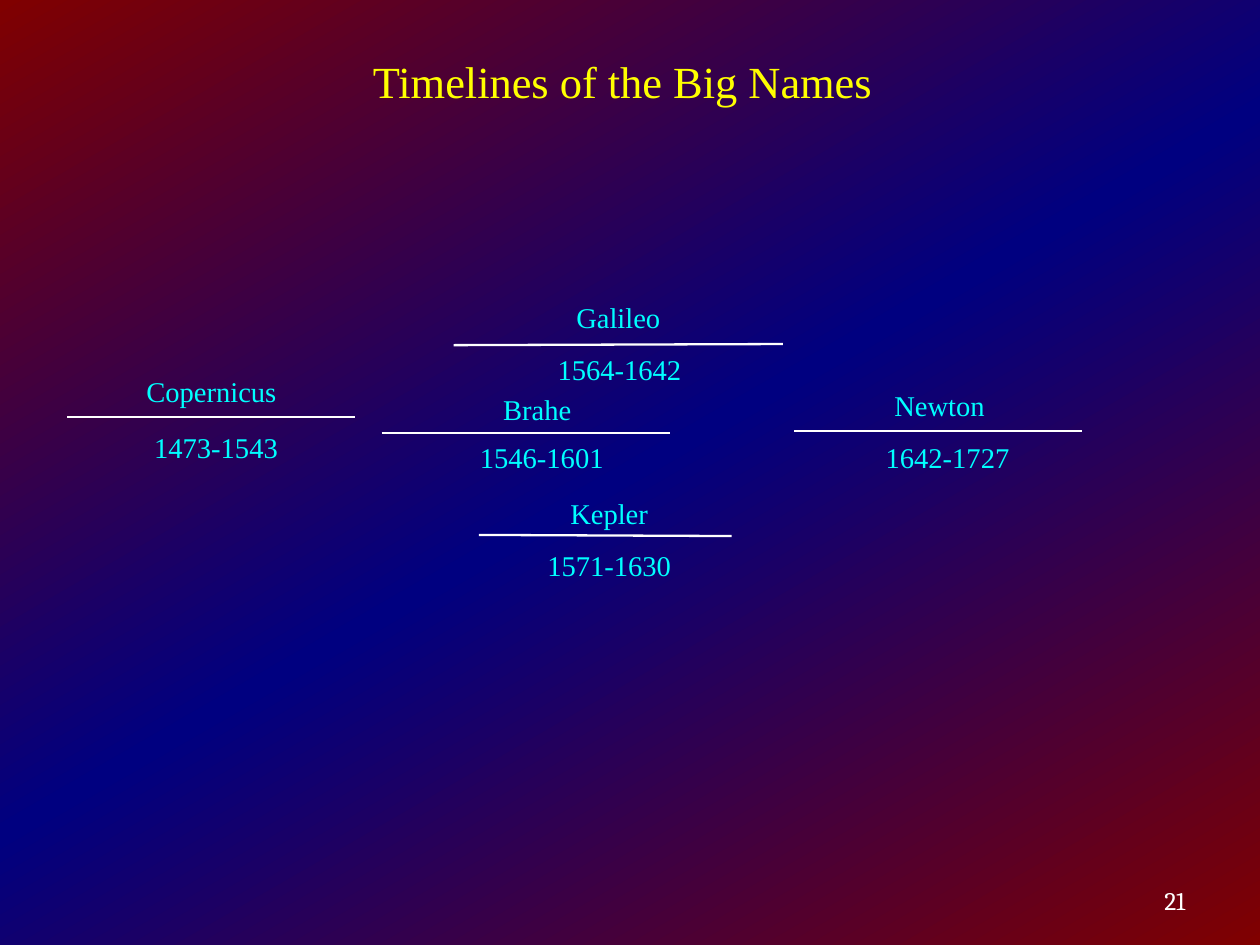
from copy import deepcopy
from dataclasses import dataclass

from pptx import Presentation
from pptx.dml.color import RGBColor
from pptx.enum.shapes import MSO_CONNECTOR as Connector
from pptx.enum.text import MSO_ANCHOR as Anchor, MSO_AUTO_SIZE as AutoSize, PP_ALIGN as Align
from pptx.oxml.ns import qn
from pptx.oxml.xmlchemy import OxmlElement
from pptx.slide import Slide
from pptx.text.text import TextFrame
from pptx.util import Inches, Pt

RED, BLUE = "800000", "000080"
YELLOW, CYAN, WHITE = "FFFF00", "00FFFF", "FFFFFF"
SERIF = "Times New Roman"
CM_PER_INCH = 2.54
PAGE_WIDTH, PAGE_HEIGHT = 28 / CM_PER_INCH, 21 / CM_PER_INCH
LABEL_WIDTH, LABEL_HEIGHT = 2.1, 0.28


@dataclass
class Lifetime:
    name: str
    years: str
    line: tuple[float, float, float, float]  # start x, start y, end x, end y
    name_at: tuple[float, float]
    years_at: tuple[float, float]


LIFETIMES = [
    Lifetime("Copernicus", "1473-1543", (0.59, 3.65, 3.11, 3.65), (0.8, 3.27), (0.84, 3.76)),
    Lifetime("Galileo", "1564-1642", (3.97, 3.02, 6.85, 3.01), (4.36, 2.62), (4.37, 3.08)),
    Lifetime("Brahe", "1546-1601", (3.34, 3.79, 5.86, 3.79), (3.65, 3.43), (3.69, 3.85)),
    Lifetime("Kepler", "1571-1630", (4.19, 4.68, 6.4, 4.69), (4.28, 4.34), (4.28, 4.79)),
    Lifetime("Newton", "1642-1727", (6.95, 3.77, 9.47, 3.77), (7.17, 3.39), (7.24, 3.85)),
]


def color(value: str) -> RGBColor:
    return RGBColor.from_string(value)


def paint_background(page: Slide) -> None:
    fill = page.background.fill
    fill.gradient()
    fill.gradient_angle = 300
    stop_list = page.element.find(".//" + qn("a:gsLst"))
    stop_list.append(deepcopy(stop_list[0]))
    for stop, value, position in zip(fill.gradient_stops, (RED, BLUE, RED), (0, 0.5, 1)):
        stop.color.rgb = color(value)
        stop.position = position


def add_text(page: Slide, text: str, left: float, top: float, width: float, height: float,
             size: float, value: str, font: str = SERIF, align: Align = Align.CENTER) -> TextFrame:
    box = page.shapes.add_textbox(Inches(left), Inches(top), Inches(width), Inches(height))
    frame = box.text_frame
    frame.text = text
    frame.word_wrap = True
    para = frame.paragraphs[0]
    para.alignment = align
    span = para.runs[0]
    span.font.size = Pt(size)
    span.font.name = font
    span.font.color.rgb = color(value)
    return frame


def add_label(page: Slide, text: str, left: float, top: float, width: float = LABEL_WIDTH,
              height: float = LABEL_HEIGHT, size: float = 18, value: str = CYAN) -> None:
    frame = add_text(page, text, left, top, width, height, size, value)
    frame.margin_left = frame.margin_right = frame.margin_top = frame.margin_bottom = 0
    frame.auto_size = AutoSize.SHAPE_TO_FIT_TEXT


def add_lifetime(page: Slide, life: Lifetime) -> None:
    line = page.shapes.add_connector(Connector.STRAIGHT, *map(Inches, life.line))
    line.line.color.rgb = color(WHITE)
    line.line.width = Pt(1.45)
    line.element.spPr.append(OxmlElement("a:effectLst"))
    add_label(page, life.name, *life.name_at)
    add_label(page, life.years, *life.years_at)


def main() -> None:
    deck = Presentation()
    deck.slide_width, deck.slide_height = Inches(PAGE_WIDTH), Inches(PAGE_HEIGHT)
    page = deck.slides.add_slide(deck.slide_layouts[6])
    paint_background(page)

    # Title
    add_label(page, "Timelines of the Big Names", 1.72, 0.47, 7.45, 0.44, 28, YELLOW)

    # Lifetimes
    for life in LIFETIMES:
        add_lifetime(page, life)

    # Page number
    number = add_text(page, "21", 7.9, 7.66, 2.57, 0.44, 16, WHITE, "Cambria", Align.RIGHT)
    number.vertical_anchor = Anchor.MIDDLE

    deck.save("out.pptx")


if __name__ == "__main__":
    main()
